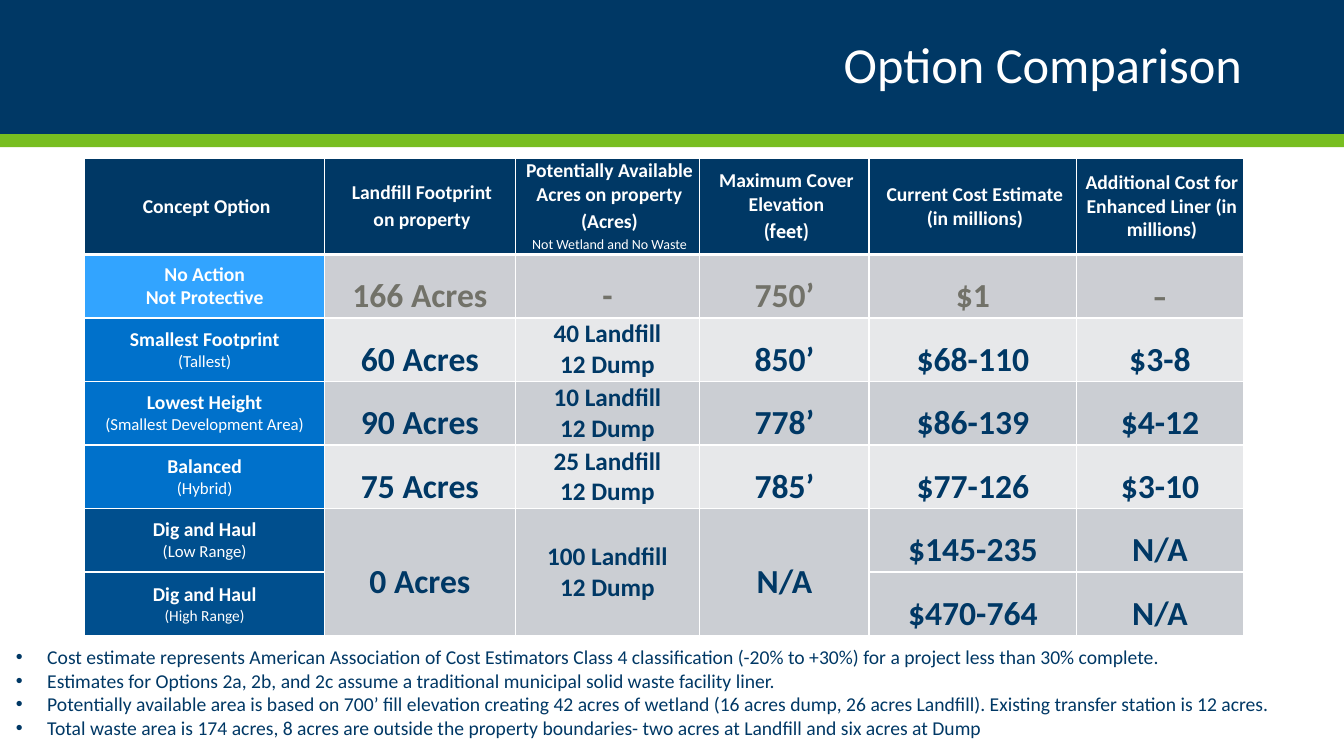
from dataclasses import dataclass

from lxml import etree
from pptx import Presentation, util as u
from pptx.dml.color import RGBColor
from pptx.enum import shapes, text
from pptx.oxml import ns

NAVY, GREEN, WHITE, GRAY = "003865", "78BE21", "FFFFFF", "727269"
BLUE, SKY, DEEP_BLUE = "0071CB", "32A4FF", "004F8E"
SILVER, PALE = "CBCED3", "E7E8EA"
CENTER, LEFT, RIGHT = text.PP_ALIGN.CENTER, text.PP_ALIGN.LEFT, text.PP_ALIGN.RIGHT
COLUMN_WIDTHS = [2.38, 1.89, 1.83, 1.68, 2.06, 1.65]
ROW_HEIGHTS = [0.76, 0.63, 0.56, 0.61, 0.55, 0.55, 0.55]
TABLE_LEFT, TABLE_TOP, TABLE_HEIGHT = 0.84, 1.57, 4.73


@dataclass
class Band:
    top: float
    height: float
    color: str


@dataclass
class Option:
    name: str
    detail: str
    values: list[str]
    name_fill: str
    value_fill: str
    color: str = NAVY
    detail_size: int = 12
    detail_bold: bool = False
    side_inset: float = 0.06


BANDS = [Band(0, 1.33, NAVY), Band(1.33, 0.13, GREEN)]

HEADERS = [
    ["Concept Option"],
    ["Landfill Footprint", "on property"],
    ["Potentially Available Acres on property", "(Acres)", "Not Wetland and No Waste"],
    ["Maximum Cover Elevation", "(feet)"],
    ["Current Cost Estimate (in millions)"],
    ["Additional Cost for Enhanced Liner (in millions)"],
]

OPTIONS = [
    Option("No Action", "Not Protective", ["166 Acres", "-", "750’", "$1", "-"],
           SKY, "CCCED3", GRAY, 14, True),
    Option("Smallest Footprint", "(Tallest)",
           ["60 Acres", "40 Landfill\n12 Dump", "850’", "$68-110", "$3-8"], BLUE, PALE),
    Option("Lowest Height", "(Smallest Development Area)",
           ["90 Acres", "10 Landfill\n12 Dump", "778’", "$86-139", "$4-12"], BLUE, SILVER),
    Option("Balanced", "(Hybrid)",
           ["75 Acres", "25 Landfill\n12 Dump", "785’", "$77-126", "$3-10"], BLUE, PALE),
    Option("Dig and Haul", "(Low Range)",
           ["0 Acres", "100 Landfill\n12 Dump", "N/A", "$145-235", "N/A"],
           DEEP_BLUE, SILVER, side_inset=0.01),
    Option("Dig and Haul", "(High Range)", ["", "", "", "$470-764", "N/A"],
           DEEP_BLUE, SILVER, detail_size=11, side_inset=0.01),
]

NOTES = [
    "Cost estimate represents American Association of Cost Estimators Class 4 classification "
    "(-20% to +30%) for a project less than 30% complete.",
    "Estimates for Options 2a, 2b, and 2c assume a traditional municipal solid waste facility liner.",
    "Potentially available area is based on 700’ fill elevation creating 42 acres of wetland "
    "(16 acres dump, 26 acres Landfill). Existing transfer station is 12 acres.",
    "Total waste area is 174 acres, 8 acres are outside the property boundaries- "
    "two acres at Landfill and six acres at Dump",
]


def rgb(value: str) -> RGBColor:
    return RGBColor.from_string(value)


def write(frame, words: str, *, size: float, color: str, bold: bool = False,
          font: str = "Calibri", align=CENTER, spacing: float = 1.0, before: float = 0,
          margin: float = 0, bullet: bool = False) -> None:
    paragraph = frame.paragraphs[0]
    if paragraph.runs:
        paragraph = frame.add_paragraph()
        paragraph.space_before = u.Pt(before)
    properties = paragraph._p.get_or_add_pPr()
    properties.set("marL", str(u.Inches(margin)))
    properties.set("indent", str(-u.Inches(margin) if bullet else 0))
    if bullet:
        etree.SubElement(properties, ns.qn("a:buFont"), typeface="Arial")
        etree.SubElement(properties, ns.qn("a:buChar"), char="•")
    paragraph.alignment = align
    paragraph.line_spacing = spacing
    run = paragraph.add_run()
    run.text = words
    run.font.size = u.Pt(size)
    run.font.name = font
    run.font.bold = bold
    run.font.color.rgb = rgb(color)


def add_band(slide, band: Band, width: int) -> None:
    shape = slide.shapes.add_shape(shapes.MSO_SHAPE.RECTANGLE, 0, u.Inches(band.top),
                                   width, u.Inches(band.height))
    shape.shadow.inherit = False
    shape.fill.solid()
    shape.fill.fore_color.rgb = rgb(band.color)
    shape.line.fill.background()


def format_cell(cell, fill: str, side_inset: float, top: float = 1, bottom: float = 1) -> None:
    cell.vertical_anchor = text.MSO_ANCHOR.MIDDLE
    cell.margin_left = cell.margin_right = u.Inches(side_inset)
    cell.margin_top = cell.margin_bottom = u.Inches(0.01)
    properties = cell._tc.get_or_add_tcPr()
    for side, width in (("L", 1), ("R", 1), ("T", top), ("B", bottom)):
        border = etree.SubElement(properties, ns.qn(f"a:ln{side}"), w=str(u.Pt(width)))
        solid = etree.SubElement(border, ns.qn("a:solidFill"))
        etree.SubElement(solid, ns.qn("a:srgbClr"), val=WHITE)
    cell.fill.solid()
    cell.fill.fore_color.rgb = rgb(fill)


def fill_header(table) -> None:
    for column, lines in enumerate(HEADERS):
        cell = table.cell(0, column)
        format_cell(cell, NAVY, 0.01, bottom=3)
        for line in lines:
            small = line.startswith("Not ")
            write(cell.text_frame, line, size=10 if small else 14, color=WHITE, bold=not small,
                  font="Cabin" if line == "(feet)" else "Calibri", before=2, margin=0.04)


def fill_option(table, row: int, option: Option) -> None:
    top = 3 if row == 1 else 1
    name_cell = table.cell(row, 0)
    format_cell(name_cell, option.name_fill, option.side_inset, top)
    write(name_cell.text_frame, option.name, size=14, color=WHITE, bold=True)
    write(name_cell.text_frame, option.detail, size=option.detail_size, color=WHITE,
          bold=option.detail_bold)
    for column, value in enumerate(option.values, 1):
        cell = table.cell(row, column)
        format_cell(cell, option.value_fill, option.side_inset, top)
        if not value:
            continue
        lines = value.split("\n")
        single = len(lines) == 1
        font = "Cabin" if value == "-" and column == 5 else "Calibri"
        for line in lines:
            write(cell.text_frame, line, size=24 if single else 18, color=option.color,
                  bold=True, font=font, spacing=1.5 if single else 1.0)


def add_comparison(slide) -> None:
    frame = slide.shapes.add_table(len(ROW_HEIGHTS), len(COLUMN_WIDTHS), u.Inches(TABLE_LEFT),
                                   u.Inches(TABLE_TOP), u.Inches(sum(COLUMN_WIDTHS)),
                                   u.Inches(TABLE_HEIGHT))
    table = frame.table
    table.first_row = table.horz_banding = False
    for column, width in zip(table.columns, COLUMN_WIDTHS):
        column.width = u.Inches(width)
    for row, height in zip(table.rows, ROW_HEIGHTS):
        row.height = u.Inches(height)
    frame.height = u.Inches(TABLE_HEIGHT)
    fill_header(table)
    for row, option in enumerate(OPTIONS, 1):
        fill_option(table, row, option)
    for column in (1, 2, 3):
        table.cell(5, column).merge(table.cell(6, column))


def add_title(slide) -> None:
    title = slide.shapes.title
    title.left, title.top = u.Inches(0.92), u.Inches(0.17)
    title.width, title.height = u.Inches(11.5), u.Inches(1)
    title.text_frame.vertical_anchor = text.MSO_ANCHOR.MIDDLE
    write(title.text_frame, "Option Comparison", size=36, color=WHITE, align=RIGHT, spacing=0.9)
    slide.shapes.element.append(title.element)


def add_notes(slide) -> None:
    box = slide.shapes.add_textbox(u.Inches(0.06), u.Inches(6.35), u.Inches(12.65), u.Inches(1.04))
    box.text_frame.word_wrap = True
    box.text_frame.auto_size = text.MSO_AUTO_SIZE.SHAPE_TO_FIT_TEXT
    for note in NOTES:
        write(box.text_frame, note, size=14, color=NAVY, align=LEFT, margin=0.31, bullet=True)


def main() -> None:
    presentation = Presentation()
    presentation.slide_width, presentation.slide_height = u.Inches(13.33), u.Inches(7.5)
    slide = presentation.slides.add_slide(presentation.slide_layouts[5])
    for band in BANDS:
        add_band(slide, band, presentation.slide_width)
    add_title(slide)
    add_comparison(slide)
    add_notes(slide)
    presentation.save("out.pptx")


if __name__ == "__main__":
    main()
